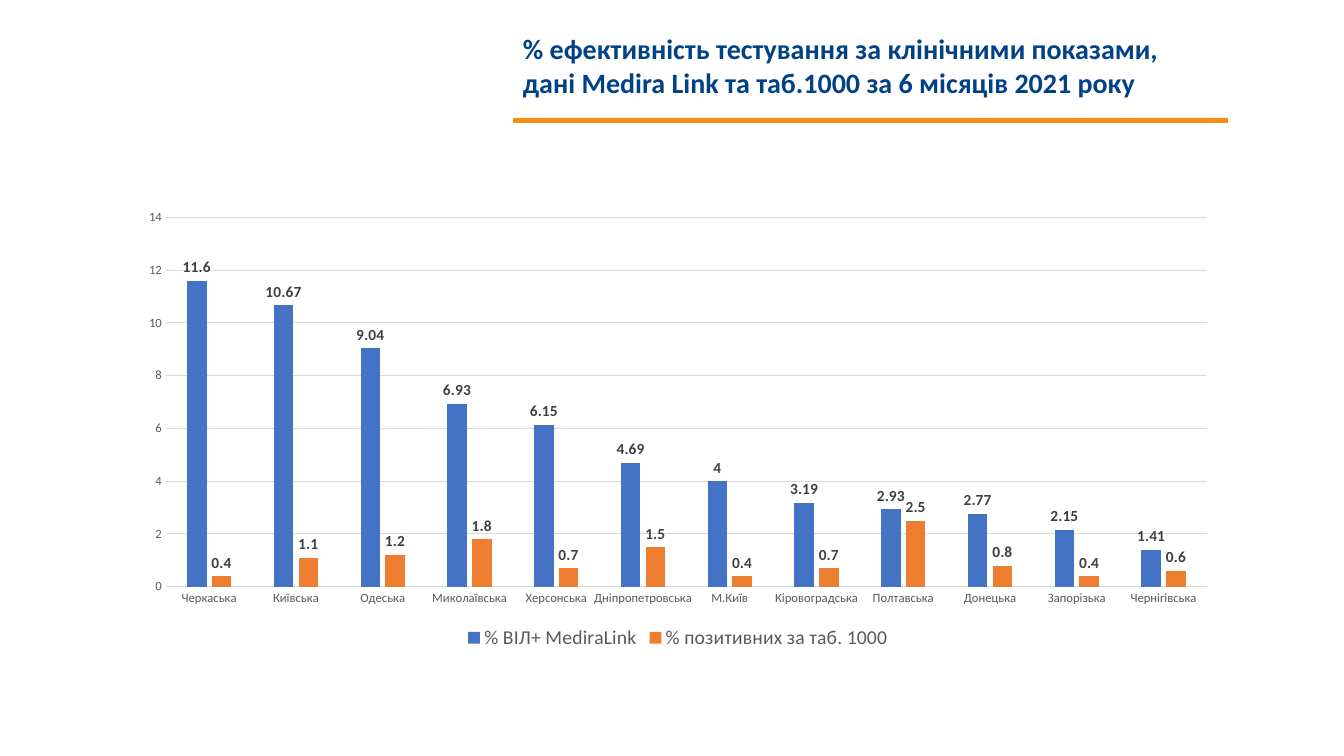
from pptx import Presentation
from pptx.chart.data import CategoryChartData
from pptx.dml.color import RGBColor
from pptx.enum.chart import (XL_CHART_TYPE, XL_LABEL_POSITION,
                             XL_LEGEND_POSITION, XL_TICK_MARK)
from pptx.enum.shapes import MSO_SHAPE
from pptx.util import Pt

COLUMNS = XL_CHART_TYPE.COLUMN_CLUSTERED
OUT_END = XL_LABEL_POSITION.OUTSIDE_END
BOTTOM = XL_LEGEND_POSITION.BOTTOM
NO_TICK = XL_TICK_MARK.NONE
RECT = MSO_SHAPE.RECTANGLE

PX = 914400 / 100.8
COLORS = {"title": "004188", "rule": "F29015", "text": "595959",
          "label": "404040", "grid": "D9D9D9", "black": "000000",
          "blue": "4472C4", "orange": "ED7D31"}

TITLE = ["% ефективність тестування за клінічними показами,",
         "дані Medira Link та таб.1000 за 6 місяців 2021 року"]
REGIONS = ["Черкаська", "Київська", "Одеська", "Миколаївська", "Херсонська",
           "Дніпропетровська", "М.Київ", "Кіровоградська", "Полтавська",
           "Донецька", "Запорізька", "Чернігівська"]
SERIES = [
    ("% ВІЛ+ MediraLink", "blue",
     [11.6, 10.67, 9.04, 6.93, 6.15, 4.69, 4, 3.19, 2.93, 2.77, 2.15, 1.41]),
    ("% позитивних за таб. 1000", "orange",
     [0.4, 1.1, 1.2, 1.8, 0.7, 1.5, 0.4, 0.7, 2.5, 0.8, 0.4, 0.6]),
]


class Deck:
    def __init__(self, width, height, face):
        self.face = face
        self.prs = Presentation()
        self.prs.slide_width, self.prs.slide_height = self.emu(width, height)
        self.slide = self.prs.slides.add_slide(self.prs.slide_layouts[6])

    def emu(self, *sizes):
        return [round(size * PX) for size in sizes]

    def paint(self, fill, color):
        fill.solid()
        fill.fore_color.rgb = RGBColor.from_string(COLORS[color])

    def style(self, font, size, color, bold=False):
        font.name, font.size, font.bold = self.face, Pt(size), bold
        font.color.rgb = RGBColor.from_string(COLORS[color])

    def text(self, box, lines, size, color, bold=False):
        frame = self.slide.shapes.add_textbox(*self.emu(*box)).text_frame
        frame.word_wrap = True
        frame.text = "\n".join(lines)
        for para in frame.paragraphs:
            for run in para.runs:
                self.style(run.font, size, color, bold)

    def bar(self, box, color):
        shape = self.slide.shapes.add_shape(RECT, *self.emu(*box))
        shape.shadow.inherit = False
        self.paint(shape.fill, color)
        shape.line.fill.background()

    def axis(self, axis):
        axis.major_tick_mark = axis.minor_tick_mark = NO_TICK
        self.style(axis.tick_labels.font, 9, "text")

    def hairline(self, line):
        self.paint(line.fill, "grid")
        line.width = Pt(0.75)

    def columns(self, box, cats, series):
        data = CategoryChartData()
        data.categories = cats
        for name, _, values in series:
            data.add_series(name, values)
        chart = self.slide.shapes.add_chart(
            COLUMNS, *self.emu(*box), data).chart
        self.style(chart.font, 10, "black")
        chart.has_title = False

        # Axes and grid
        base, scale = chart.category_axis, chart.value_axis
        self.axis(base)
        self.axis(scale)
        self.hairline(base.format.line)
        scale.format.line.fill.background()
        self.hairline(scale.major_gridlines.format.line)
        scale.minimum_scale, scale.maximum_scale = 0, 14
        scale.major_unit = 2

        # Legend
        chart.has_legend = True
        chart.legend.position = BOTTOM
        chart.legend.include_in_layout = False
        self.style(chart.legend.font, 14, "text")

        # Columns and their values
        plot = chart.plots[0]
        plot.gap_width, plot.overlap = 219, -27
        plot.vary_by_categories = False
        for item, (_, color, _) in zip(plot.series, series):
            self.paint(item.format.fill, color)
            item.invert_if_negative = False
            labels = item.data_labels
            labels.show_value = True
            labels.position = OUT_END
            self.style(labels.font, 11, "label", True)


def main():
    deck = Deck(1344, 756, "Calibri")
    # Heading
    deck.text((513, 27, 777, 78), TITLE, 20, "title", True)
    deck.bar((513, 118, 715, 5), "rule")
    # Test results by region
    deck.columns((127, 201, 1102, 453), REGIONS, SERIES)
    deck.prs.save("out.pptx")


if __name__ == "__main__":
    main()
